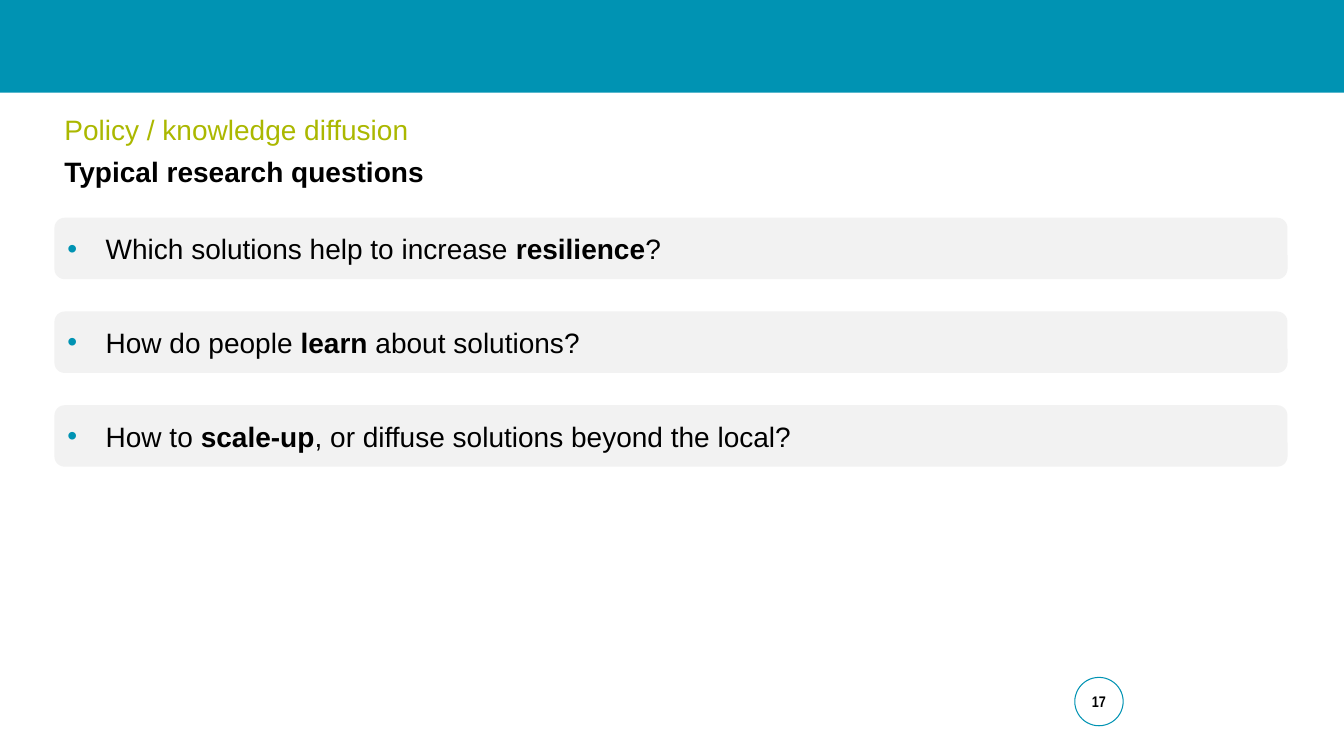
from lxml import etree
from pptx import Presentation
from pptx.dml.color import RGBColor
from pptx.enum.shapes import MSO_SHAPE
from pptx.enum.text import MSO_ANCHOR, PP_ALIGN
from pptx.oxml.ns import qn
from pptx.util import Inches, Pt

RECTANGLE = MSO_SHAPE.RECTANGLE
ROUNDED = MSO_SHAPE.ROUNDED_RECTANGLE
OVAL = MSO_SHAPE.OVAL
MIDDLE = MSO_ANCHOR.MIDDLE
CENTER = PP_ALIGN.CENTER
LEFT = PP_ALIGN.LEFT

TEAL, GREEN, GREY, BLACK, WHITE = "0093B3", "ABB800", "F2F2F2", "000000", "FFFFFF"
BODY = {"name": "Arial", "size": Pt(20), "bold": False}

# Each question: text before, emphasised word, text after
QUESTIONS = [
    ("Which solutions help to increase ", "resilience", "?"),
    ("How do people ", "learn", " about solutions?"),
    ("How to ", "scale-up", ", or diffuse solutions beyond the local?"),
]


def color(value):
    return RGBColor.from_string(value)


def add_span(para, text, tint=BLACK, **formats):
    span = para.add_run()
    span.text = text
    for name, value in {**BODY, **formats}.items():
        setattr(span.font, name, value)
    span.font.color.rgb = color(tint)


def add_panel(page, kind, box, fill, line=None):
    panel = page.shapes.add_shape(kind, *map(Inches, box))
    panel.shadow.inherit = False
    panel.fill.solid()
    panel.fill.fore_color.rgb = color(fill)
    if line:
        panel.line.color.rgb = color(line)
        panel.line.width = Pt(0.75)
    else:
        panel.line.fill.background()
    return panel


def add_bullet(para, indent):
    properties = para._p.get_or_add_pPr()
    properties.set("marL", str(Inches(indent)))
    properties.set("indent", str(-Inches(indent)))
    bullet_color = etree.SubElement(properties, qn("a:buClr"))
    etree.SubElement(bullet_color, qn("a:srgbClr"), val=TEAL)
    etree.SubElement(properties, qn("a:buFont"), typeface="Arial")
    etree.SubElement(properties, qn("a:buChar"), char="•")


def add_heading(page, box):
    frame = page.shapes.add_textbox(*map(Inches, box)).text_frame
    frame.word_wrap = True
    add_span(frame.paragraphs[0], "Policy / knowledge diffusion", GREEN)
    subtitle = frame.add_paragraph()
    subtitle.space_before = Pt(6)
    add_span(subtitle, "Typical research questions", bold=True)


def add_questions(page, box, pitch):
    left, top, width, height = box
    for row, (before, emphasis, after) in enumerate(QUESTIONS):
        panel = add_panel(page, ROUNDED, (left, top + row * pitch, width, height), GREY)
        frame = panel.text_frame
        frame.word_wrap = True
        frame.vertical_anchor = MIDDLE
        para = frame.paragraphs[0]
        add_bullet(para, 0.38)
        para.alignment = LEFT
        add_span(para, before)
        add_span(para, emphasis, bold=True)
        add_span(para, after)


def add_page_number(page, box, number):
    frame = add_panel(page, OVAL, box, WHITE, TEAL).text_frame
    margins = ("margin_left", "margin_top", "margin_right", "margin_bottom")
    for name, value in {**dict.fromkeys(margins, 0), "vertical_anchor": MIDDLE,
                        "word_wrap": False}.items():
        setattr(frame, name, value)
    para = frame.paragraphs[0]
    para.alignment = CENTER
    add_span(para, number, name="Arial Narrow", size=Pt(11), bold=True)


def main():
    deck = Presentation()
    deck.slide_width, deck.slide_height = Inches(13.33), Inches(7.5)
    page = deck.slides.add_slide(deck.slide_layouts[6])

    # Top band, heading, question rows, page number
    add_panel(page, RECTANGLE, (0, 0, 13.33, 0.92), TEAL)
    add_heading(page, (0.54, 1.07, 11.73, 0.62))
    add_questions(page, (0.54, 2.16, 12.23, 0.61), 0.93)
    add_page_number(page, (10.66, 6.72, 0.48, 0.48), "17")

    deck.save("out.pptx")


if __name__ == "__main__":
    main()
